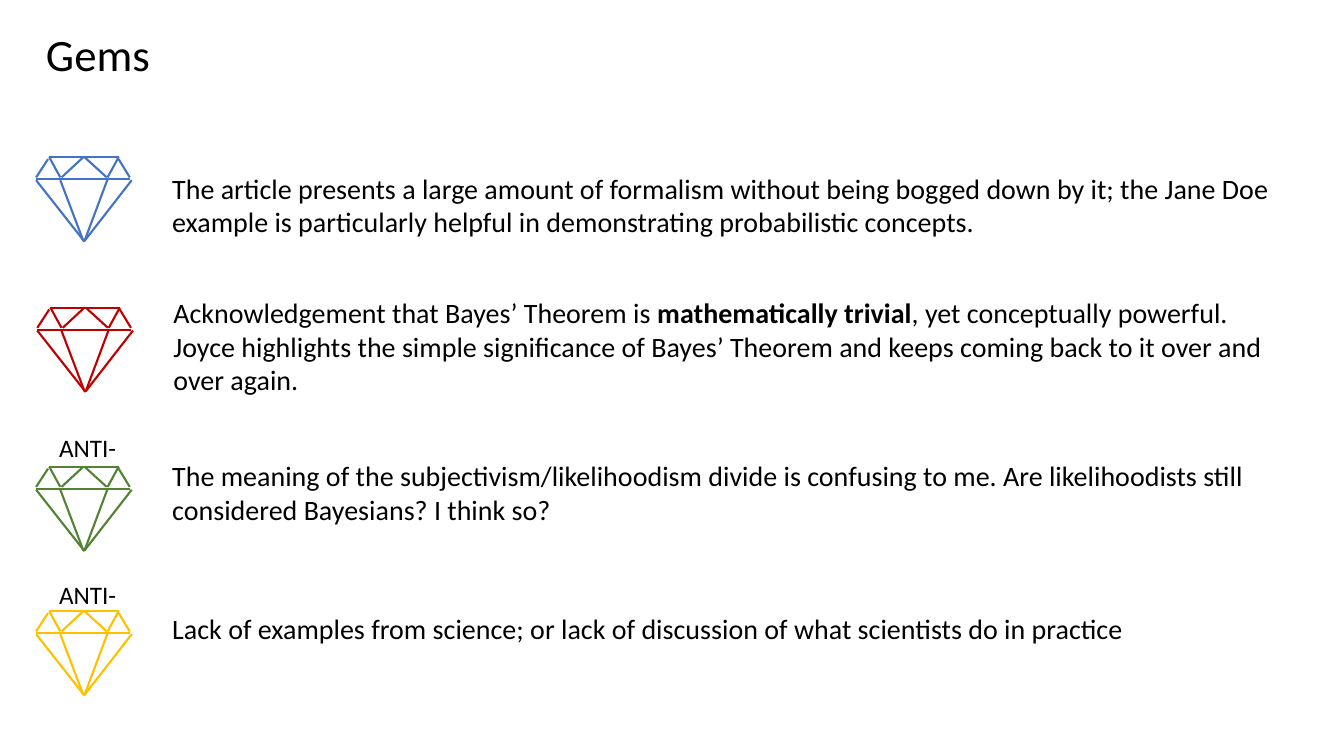
import pptx
import pptx.util
import pptx.dml.color
import pptx.enum.shapes
import pptx.enum.text
import lxml.etree
from pptx.util import Cm

COLORS = {"text": "000000", "blue": "4472C4", "red": "C00000",
          "green": "548235", "yellow": "FFC000"}

# Facets of a gem, in cm from its top left corner: x1, y1, x2, y2
FACETS = [
    (0.33, 0, 2.08, 0),            # table
    (0.3, 0.05, 0, 0.51),          # crown sides
    (2.08, 0.05, 2.36, 0.51),
    (1.22, 2.13, 0, 0.58),         # pavilion sides
    (1.22, 2.11, 2.41, 0.58),
    (0, 0.56, 2.36, 0.56),         # girdle
    (1.19, 2.11, 0.61, 0.58),      # inner pavilion
    (1.22, 2.11, 1.8, 0.56),
    (0.33, 0, 0.61, 0.51),         # inner crown
    (2.08, 0, 1.8, 0.51),
    (1.19, 0, 0.64, 0.51),
    (1.22, 0, 1.78, 0.51),
]

# Color, gem left and top, text box (left, top, width, height), label top, runs (text, bold)
GEMS = [
    ("blue", 0.91, 3.96, (4.09, 4.19, 28.42, 1.96), None,
     [("The article presents a large amount of formalism without being bogged down by it; "
       "the Jane Doe example is particularly helpful in demonstrating probabilistic concepts.",
       False)]),
    ("red", 0.94, 7.75, (4.12, 7.32, 28.55, 2.82), None,
     [("Acknowledgement that Bayes’ Theorem is ", False),
      ("mathematically trivial", True),
      (", yet conceptually powerful. Joyce highlights the simple significance of Bayes’ "
       "Theorem and keeps coming back to it over and over again.", False)]),
    ("green", 0.91, 11.76, (4.09, 11.43, 28.42, 1.96), 10.77,
     [("The meaning of the subjectivism/likelihoodism divide is confusing to me. "
       "Are likelihoodists still considered Bayesians? I think so?", False)]),
    ("yellow", 0.91, 15.4, (4.09, 15.29, 28.42, 1.12), 14.48,
     [("Lack of examples from science; or lack of discussion of what scientists do in practice",
       False)]),
]


class SlideBuilder:
    font_name = "Calibri"
    line_width = pptx.util.Pt(1.5)

    def __init__(self, slide):
        self.slide = slide

    def color(self, name):
        return pptx.dml.color.RGBColor.from_string(COLORS[name])

    def text(self, box, runs, size, wrap=True, middle=False):
        shape = self.slide.shapes.add_textbox(*map(Cm, box))
        frame = shape.text_frame
        frame.word_wrap = wrap
        if middle:
            frame.vertical_anchor = pptx.enum.text.MSO_ANCHOR.MIDDLE
        paragraph = frame.paragraphs[0]
        paragraph.font.name = self.font_name
        paragraph.font.size = pptx.util.Pt(size)
        paragraph.font.color.rgb = self.color("text")
        for words, bold in runs:
            run = paragraph.add_run()
            run.text = words
            if bold:
                run.font.bold = True
        return paragraph

    def line(self, shapes, ends, color):
        connector = shapes.add_connector(
            pptx.enum.shapes.MSO_CONNECTOR.STRAIGHT, *map(Cm, ends))
        connector.line.color.rgb = self.color(color)
        connector.line.width = self.line_width
        properties = connector.element.spPr
        lxml.etree.SubElement(properties, pptx.oxml.ns.qn("a:effectLst"))

    def gem(self, left, top, color):
        group = self.slide.shapes.add_group_shape()
        for x1, y1, x2, y2 in FACETS:
            self.line(group.shapes, (left + x1, top + y1, left + x2, top + y2), color)


def main():
    presentation = pptx.Presentation()
    presentation.slide_width = Cm(33.87)
    presentation.slide_height = Cm(19.05)
    builder = SlideBuilder(presentation.slides.add_slide(presentation.slide_layouts[6]))

    # Title
    title = builder.text((0.91, -0.41, 29.21, 3.68), [("Gems", False)], 32, middle=True)
    title.line_spacing = 0.9

    # Gems with their remarks
    for color, left, top, box, label_top, runs in GEMS:
        builder.gem(left, top, color)
        builder.text(box, runs, 20)
        if label_top:
            builder.text((1.24, label_top, 1.96, 1.02), [("ANTI-", False)], 18, wrap=False)

    presentation.save("out.pptx")


if __name__ == "__main__":
    main()
